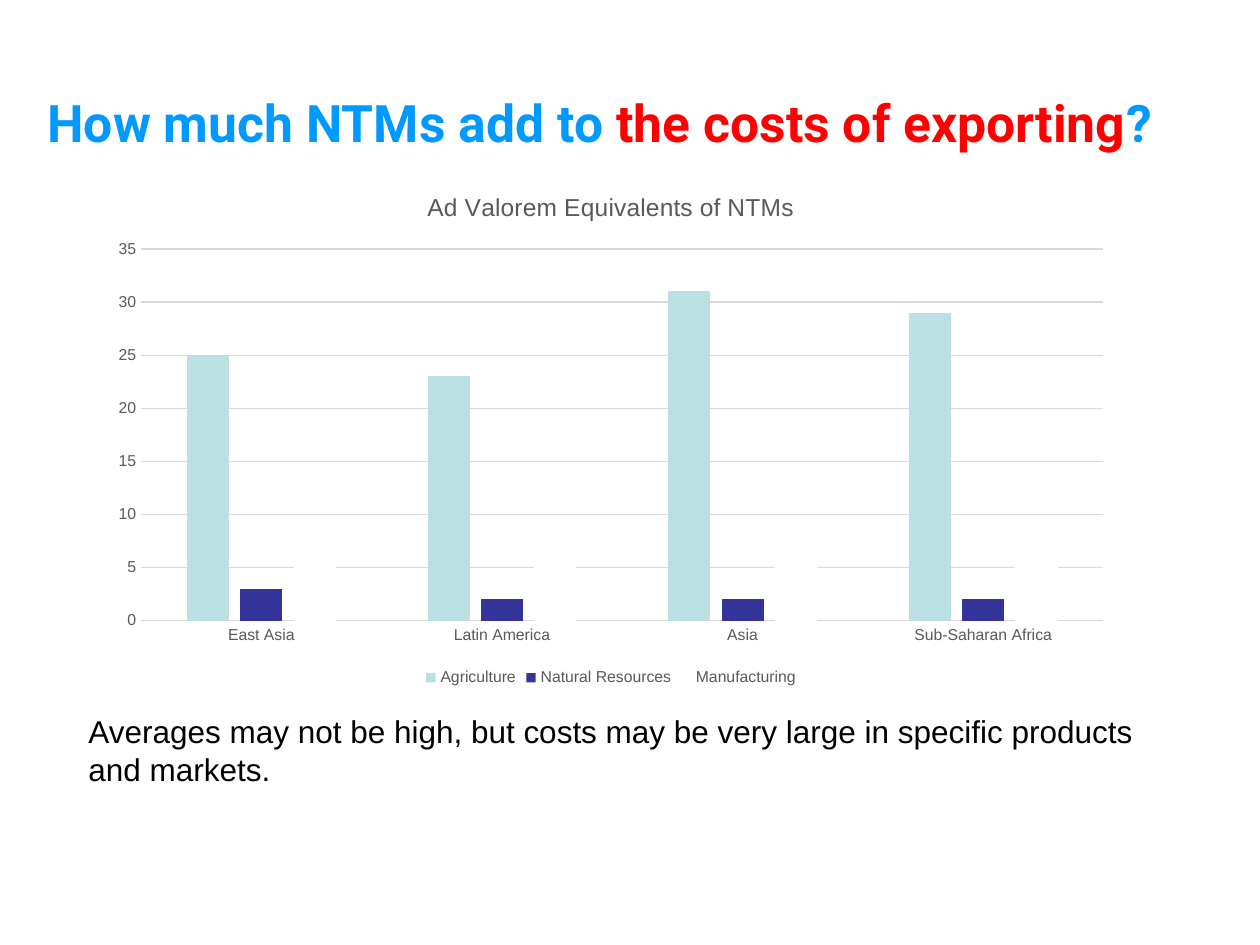
from dataclasses import dataclass

from pptx import Presentation
from pptx.chart.data import CategoryChartData
from pptx.dml.color import RGBColor
from pptx.enum.chart import XL_CHART_TYPE, XL_LEGEND_POSITION, XL_TICK_MARK
from pptx.enum.text import MSO_ANCHOR
from pptx.util import Pt

SCALE = 914400 / 126


def emu(*px):
    return [round(n * SCALE) for n in px]


def color(code):
    return RGBColor.from_string(code)


@dataclass(frozen=True)
class Theme:
    head_font: str = "Roboto"
    body_font: str = "Arial"
    blue: str = "0099FF"
    red: str = "FF0000"
    black: str = "000000"
    white: str = "FFFFFF"
    gray: str = "595959"
    rule: str = "D9D9D9"
    bars: tuple = ("BBE0E3", "333399", "FFFFFF")
    head: float = 29.5
    body: float = 18
    title: float = 14
    label: float = 9


def style(font, name, size, tint, bold=False):
    font.name, font.size, font.bold = name, Pt(size), bold
    font.color.rgb = color(tint)


def write(para, text, **form):
    run = para.add_run()
    run.text = text
    style(run.font, **form)


class Board:
    def __init__(self, deck, theme):
        self.theme = theme
        self.slide = deck.slides.add_slide(deck.slide_layouts[6])

    def text(self, box, parts, name, size, bold=False,
             anchor=MSO_ANCHOR.TOP, fill=None):
        """Add one paragraph made of (text, tint) parts."""
        shape = self.slide.shapes.add_textbox(*emu(*box))
        if fill:
            shape.fill.solid()
            shape.fill.fore_color.rgb = color(fill)
        frame = shape.text_frame
        frame.word_wrap = True
        frame.vertical_anchor = anchor
        for text, tint in parts:
            write(frame.paragraphs[0], text, name=name, size=size,
                  tint=tint, bold=bold)

    def chart(self, box, title, groups, series):
        theme = self.theme
        data = CategoryChartData()
        data.categories = groups
        for name, values in series.items():
            data.add_series(name, values)
        chart = self.slide.shapes.add_chart(
            XL_CHART_TYPE.COLUMN_CLUSTERED, *emu(*box), data).chart
        small = dict(name=theme.body_font, size=theme.label, tint=theme.gray)
        style(chart.font, **small)
        chart.has_title = True
        write(chart.chart_title.text_frame.paragraphs[0], title,
              **{**small, "size": theme.title})
        chart.chart_title.include_in_layout = False

        chart.has_legend = True
        chart.legend.position = XL_LEGEND_POSITION.BOTTOM
        chart.legend.include_in_layout = False
        style(chart.legend.font, **small)

        plot = chart.plots[0]
        plot.gap_width, plot.overlap = 219, -27
        plot.vary_by_categories = False
        for bar, tint in zip(plot.series, theme.bars):
            bar.format.fill.solid()
            bar.format.fill.fore_color.rgb = color(tint)
            bar.invert_if_negative = False

        across, up = chart.category_axis, chart.value_axis
        for axis in (across, up):
            axis.major_tick_mark = axis.minor_tick_mark = XL_TICK_MARK.NONE
            style(axis.tick_labels.font, **small)
        up.minimum_scale, up.maximum_scale, up.major_unit = 0, 35, 5
        up.has_major_gridlines = True
        up.format.line.fill.background()
        for line in (across.format.line, up.major_gridlines.format.line):
            line.color.rgb = color(theme.rule)
            line.width = Pt(0.75)


def main():
    deck = Presentation()
    deck.slide_width, deck.slide_height = emu(1260, 945)
    theme = Theme()
    board = Board(deck, theme)
    board.text(
        (35, 37, 1225, 170),
        [("How much NTMs add to ", theme.blue),
         ("the costs of exporting", theme.red),
         ("?", theme.blue)],
        theme.head_font, theme.head, bold=True,
        anchor=MSO_ANCHOR.MIDDLE, fill=theme.white)
    board.chart(
        (98, 170, 1026, 522), "Ad Valorem Equivalents of NTMs",
        ("East Asia", "Latin America", "Asia", "Sub-Saharan Africa"),
        {"Agriculture": (25, 23, 31, 29),
         "Natural Resources": (3, 2, 2, 2),
         "Manufacturing": (9, 8, 8, 8)})
    board.text(
        (76, 706, 1071, 89),
        [("Averages may not be high, but costs may be very large in "
          "specific products and markets.", theme.black)],
        theme.body_font, theme.body)
    deck.save("out.pptx")


if __name__ == "__main__":
    main()
